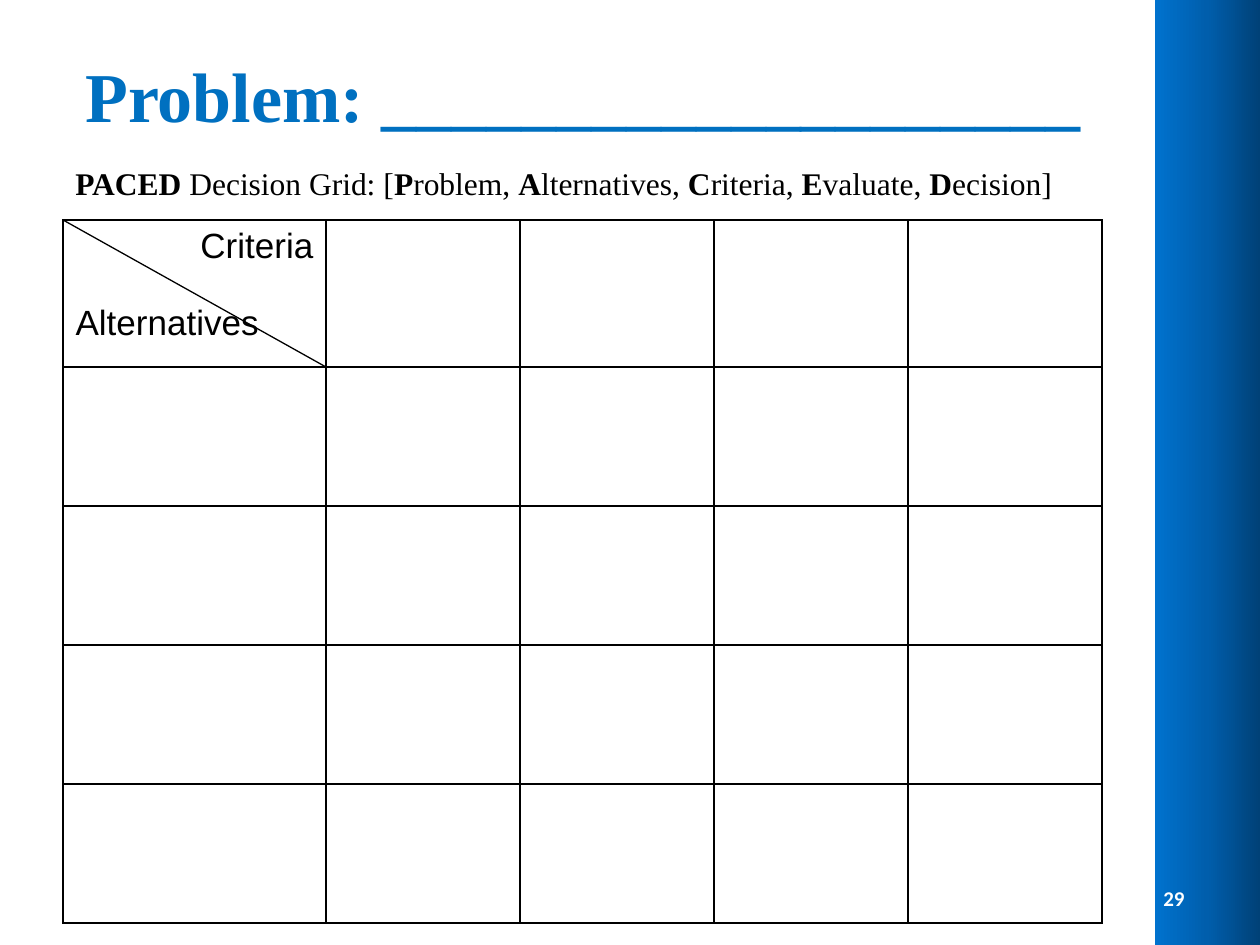
"""Build the PACED decision grid slide."""
from copy import deepcopy
from pptx import Presentation, util as u
from pptx.dml.color import RGBColor
from pptx.enum import shapes as sh, text as tx
from pptx.oxml import parse_xml
from pptx.oxml.ns import nsdecls


def px(*vals):
    return [u.Emu(round(v * 914400 / 126)) for v in vals]


def write(para, words, size, font="Times New Roman", color="000000", align="LEFT", gap=0):
    para.alignment = getattr(tx.PP_ALIGN, align)
    para.space_before = u.Pt(gap)
    for i, part in enumerate(words.split("*")):
        if part:
            run = para.add_run()
            run.text = part
            run.font.size, run.font.name = u.Pt(size), font
            run.font.bold = i % 2 == 1
            run.font.color.rgb = RGBColor.from_string(color)


prs = Presentation()
prs.slide_width, prs.slide_height = px(1260, 945)
slide = prs.slides.add_slide(prs.slide_layouts[5])

band = slide.shapes.add_shape(sh.MSO_SHAPE.RECTANGLE, *px(1155, 0, 105, 945))
band.shadow.inherit = False
band.line.fill.background()
band.fill.gradient()
band.fill.gradient_angle = 0
first = band.fill.gradient_stops
stops = band._element.spPr.find(".//{*}gsLst")
stops.insert(1, deepcopy(stops[0]))
for stop, pos, color in zip(band.fill.gradient_stops, (0, 0.5, 1), ("0072CE", "005EAC", "004177")):
    stop.position = pos
    stop.color.rgb = RGBColor.from_string(color)

title = slide.shapes.title
title.left, title.top, title.width, title.height = px(63, 44, 1040, 101)
frame = title.text_frame
frame.auto_size = tx.MSO_AUTO_SIZE.NONE
frame.vertical_anchor = tx.MSO_ANCHOR.MIDDLE
write(frame.paragraphs[0], "*Problem: ____________________*", 40, color="0070C0", align="CENTER")

note = slide.shapes.add_textbox(*px(63, 158, 1081, 50)).text_frame
note.word_wrap = True
write(note.paragraphs[0], "*PACED* Decision Grid: [*P*roblem, *A*lternatives, "
      "*C*riteria, *E*valuate, *D*ecision]", 18)

grid = slide.shapes.add_table(5, 5, *px(63, 220, 1039, 703)).table
grid.first_row = grid.horz_banding = False
for i in range(5):
    grid.columns[i].width = px(194 if i else 263)[0]
    grid.rows[i].height = px(139 if i else 147)[0]
for cell in grid.iter_cells():
    props = cell._tc.get_or_add_tcPr()
    for side in "LRTB":
        props.append(parse_xml(
            f'<a:ln{side} {nsdecls("a")} w="12700"><a:solidFill>'
            f'<a:srgbClr val="000000"/></a:solidFill></a:ln{side}>'))
    cell.fill.background()
head = grid.cell(0, 0).text_frame
write(head.paragraphs[0], "Criteria", 20, font="Arial", align="RIGHT")
write(head.add_paragraph(), "Alternatives", 20, font="Arial", gap=22)

page = slide.shapes.add_textbox(*px(1144, 873, 53, 50)).text_frame
page.word_wrap = True
page.vertical_anchor = tx.MSO_ANCHOR.MIDDLE
write(page.paragraphs[0], "*29*", 12, font="Calibri", color="FFFFFF", align="RIGHT")

slash = slide.shapes.add_connector(sh.MSO_CONNECTOR.STRAIGHT, *px(63, 220, 326, 367))
slash.line.width = u.Pt(0.75)
slash.line.color.rgb = RGBColor.from_string("000000")
slash._element.spPr.append(parse_xml(f'<a:effectLst {nsdecls("a")}/>'))

prs.save("out.pptx")
